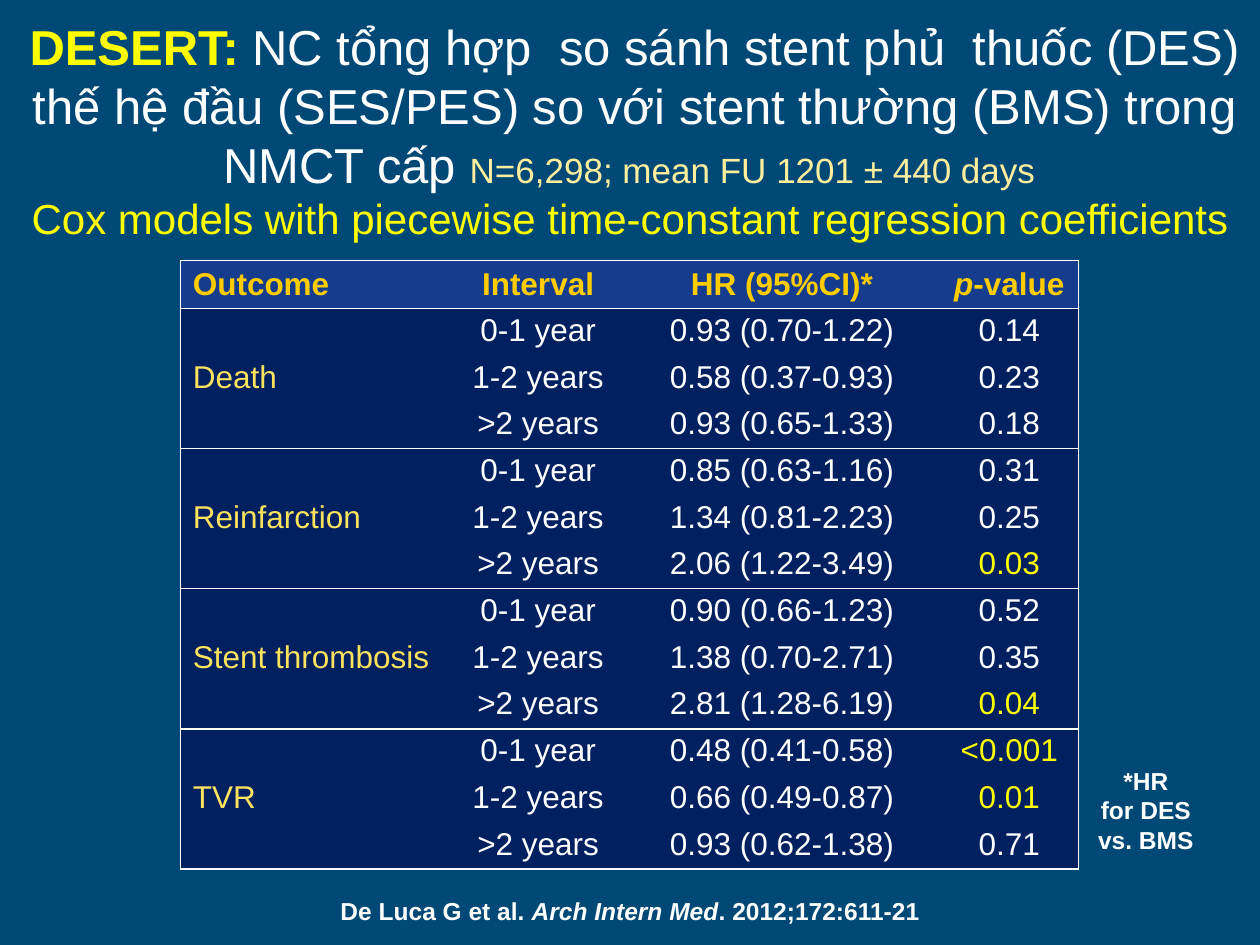
from dataclasses import dataclass

from lxml import etree
from pptx import Presentation
from pptx.dml.color import RGBColor
from pptx.enum import text as t
from pptx.oxml import ns
from pptx.util import Pt

BACKGROUND = RGBColor(0x00, 0x49, 0x76)
HEADER_BLUE = RGBColor(0x15, 0x3C, 0x8D)
BODY_BLUE = RGBColor(0x00, 0x20, 0x60)
WHITE = RGBColor(0xFF, 0xFF, 0xFF)
YELLOW = RGBColor(0xFF, 0xFF, 0x00)
GOLD = RGBColor(0xFF, 0xCC, 0x00)
SAND = RGBColor(0xFD, 0xE2, 0x5E)
CREAM = RGBColor(0xFE, 0xEE, 0x9E)

FONT = "Arial"
COLUMN_WIDTHS = (155.5, 98, 180.7, 79.2)
HEADER_HEIGHT = 27.4
ROW_HEIGHT = 26.7
INTERVALS = ("0-1 year", "1-2 years", ">2 years")
SIGNIFICANCE = 0.05


@dataclass(frozen=True)
class Span:
    text: str
    bold: bool | None = None
    italic: bool | None = None
    color: RGBColor | None = None
    size: float | None = None


@dataclass(frozen=True)
class Caption:
    left: float
    top: float
    width: float
    height: float
    size: float
    color: RGBColor
    lines: tuple[tuple[Span, ...], ...]
    bold: bool = False
    wrap: bool = False


@dataclass(frozen=True)
class Outcome:
    name: str
    results: tuple[tuple[str, str], ...]


OUTCOMES = (
    Outcome("Death", (("0.93 (0.70-1.22)", "0.14"), ("0.58 (0.37-0.93)", "0.23"), ("0.93 (0.65-1.33)", "0.18"))),
    Outcome("Reinfarction", (("0.85 (0.63-1.16)", "0.31"), ("1.34 (0.81-2.23)", "0.25"), ("2.06 (1.22-3.49)", "0.03"))),
    Outcome("Stent thrombosis", (("0.90 (0.66-1.23)", "0.52"), ("1.38 (0.70-2.71)", "0.35"), ("2.81 (1.28-6.19)", "0.04"))),
    Outcome("TVR", (("0.48 (0.41-0.58)", "<0.001"), ("0.66 (0.49-0.87)", "0.01"), ("0.93 (0.62-1.38)", "0.71"))),
)
HEADER = (
    (Span("Outcome"),),
    (Span("Interval"),),
    (Span("HR (95%CI)*"),),
    (Span("p", italic=True), Span("-value")),
)
TITLE = (
    Span("DESERT: ", bold=True, color=YELLOW),
    Span("NC tổng hợp  so sánh stent phủ  thuốc (DES) thế hệ đầu (SES/PES) so với stent thường (BMS) trong NMCT cấp "),
    Span("N=6,298; mean FU 1201 ± 440 days ", color=CREAM, size=20),
)
CAPTIONS = (
    Caption(7.2, 106.6, 705.6, 36.4, 24, YELLOW,
            ((Span("Cox models with piecewise time-constant regression coefficients"),),)),
    Caption(182.9, 508.3, 354.2, 24.3, 14, WHITE,
            ((Span("De Luca G et al. "), Span("Arch Intern Med", italic=True), Span(". 2012;172:611-21")),), bold=True),
    Caption(613.4, 434.2, 82.8, 58.2, 14, WHITE,
            ((Span("*HR"),), (Span("for DES"),), (Span("vs. BMS"),)), bold=True, wrap=True),
)


def write(paragraph, spans: tuple[Span, ...], size: float, color: RGBColor,
          bold: bool = False, align=t.PP_ALIGN.CENTER) -> None:
    paragraph.alignment = align
    paragraph.font.name = FONT
    paragraph.font.size = Pt(size)
    paragraph.font.bold = bold
    paragraph.font.color.rgb = color
    for span in spans:
        run = paragraph.add_run()
        run.text = span.text
        if span.bold is not None:
            run.font.bold = span.bold
        if span.italic is not None:
            run.font.italic = span.italic
        if span.size is not None:
            run.font.size = Pt(span.size)
        if span.color is not None:
            run.font.color.rgb = span.color


def set_borders(cell, drawn: dict[str, bool]) -> None:
    properties = cell._tc.get_or_add_tcPr()
    for index, (side, visible) in enumerate(drawn.items()):
        line = etree.Element(ns.qn(f"a:ln{side}"), w=str(Pt(1)))
        if visible:
            fill = etree.SubElement(line, ns.qn("a:solidFill"))
            etree.SubElement(fill, ns.qn("a:srgbClr"), val=str(WHITE))
        else:
            etree.SubElement(line, ns.qn("a:noFill"))
        properties.insert(index, line)


def draw_title(slide) -> None:
    title = slide.shapes.title
    title.left, title.top, title.width, title.height = Pt(12.2), Pt(5.8), Pt(700.6), Pt(59.8)
    frame = title.text_frame
    frame.auto_size = t.MSO_AUTO_SIZE.NONE
    frame.word_wrap = True
    frame.vertical_anchor = t.MSO_ANCHOR.TOP
    frame.margin_left = frame.margin_right = frame.margin_top = frame.margin_bottom = Pt(3.6)
    write(frame.paragraphs[0], TITLE, 28, WHITE)


def draw_caption(slide, caption: Caption) -> None:
    box = slide.shapes.add_textbox(Pt(caption.left), Pt(caption.top), Pt(caption.width), Pt(caption.height))
    frame = box.text_frame
    frame.word_wrap = caption.wrap
    for index, spans in enumerate(caption.lines):
        paragraph = frame.add_paragraph() if index else frame.paragraphs[0]
        write(paragraph, spans, caption.size, caption.color, caption.bold)


def draw_cell(table, row: int, column: int, spans: tuple[Span, ...], color: RGBColor) -> None:
    cell = table.cell(row, column)
    is_header = row == 0
    cell.vertical_anchor = t.MSO_ANCHOR.MIDDLE
    cell.margin_top = cell.margin_bottom = Pt(2)
    cell.fill.solid()
    cell.fill.fore_color.rgb = HEADER_BLUE if is_header else BODY_BLUE
    paragraph = cell.text_frame.paragraphs[0]
    if not is_header:
        paragraph.line_spacing = 0.9
    align = t.PP_ALIGN.CENTER if column else t.PP_ALIGN.LEFT
    write(paragraph, spans, 18, color, is_header, align)
    group = len(INTERVALS)
    set_borders(cell, {
        "L": column == 0,
        "R": column == len(COLUMN_WIDTHS) - 1,
        "T": is_header or row % group == 1,
        "B": row % group == 0,
    })


def draw_results(slide) -> None:
    row_count = 1 + len(OUTCOMES) * len(INTERVALS)
    height = HEADER_HEIGHT + ROW_HEIGHT * (row_count - 1)
    table = slide.shapes.add_table(
        row_count, len(COLUMN_WIDTHS), Pt(103), Pt(149), Pt(sum(COLUMN_WIDTHS)), Pt(height)).table
    for column, width in zip(table.columns, COLUMN_WIDTHS):
        column.width = Pt(width)
    for index, row in enumerate(table.rows):
        row.height = Pt(ROW_HEIGHT if index else HEADER_HEIGHT)
    for column, spans in enumerate(HEADER):
        draw_cell(table, 0, column, spans, GOLD)
    for group, outcome in enumerate(OUTCOMES):
        for step, (interval, (ratio, p_value)) in enumerate(zip(INTERVALS, outcome.results)):
            row = 1 + group * len(INTERVALS) + step
            significant = float(p_value.lstrip("<")) < SIGNIFICANCE
            draw_cell(table, row, 0, (Span(outcome.name),) if step == 1 else (), SAND)
            draw_cell(table, row, 1, (Span(interval),), WHITE)
            draw_cell(table, row, 2, (Span(ratio),), WHITE)
            # p-values below the threshold stand out
            draw_cell(table, row, 3, (Span(p_value),), YELLOW if significant else WHITE)


def main() -> None:
    deck = Presentation()
    deck.slide_width, deck.slide_height = Pt(720), Pt(540)
    slide = deck.slides.add_slide(deck.slide_layouts[5])
    slide.background.fill.solid()
    slide.background.fill.fore_color.rgb = BACKGROUND
    draw_results(slide)
    draw_title(slide)
    for caption in CAPTIONS:
        draw_caption(slide, caption)
    deck.save("out.pptx")


if __name__ == "__main__":
    main()
